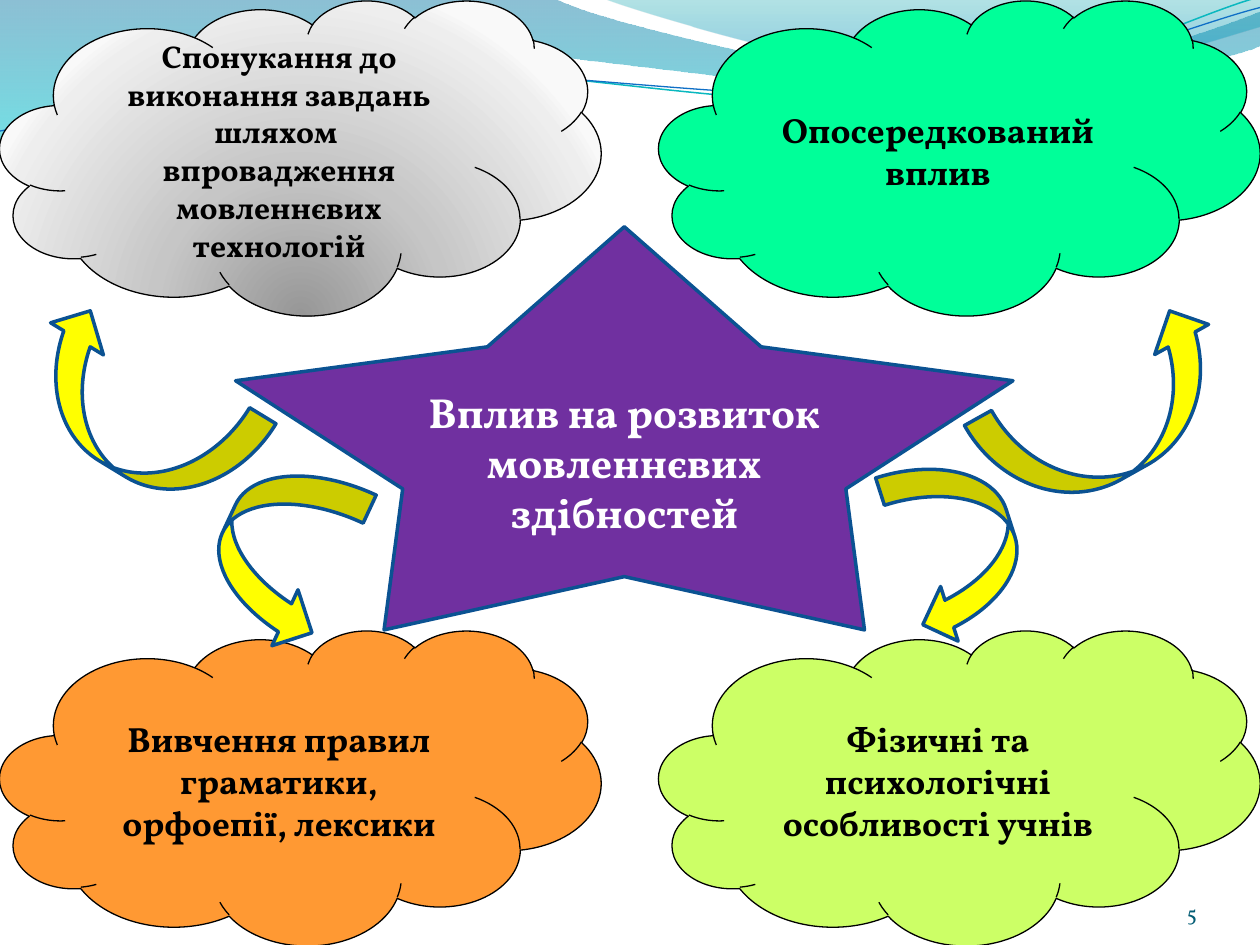
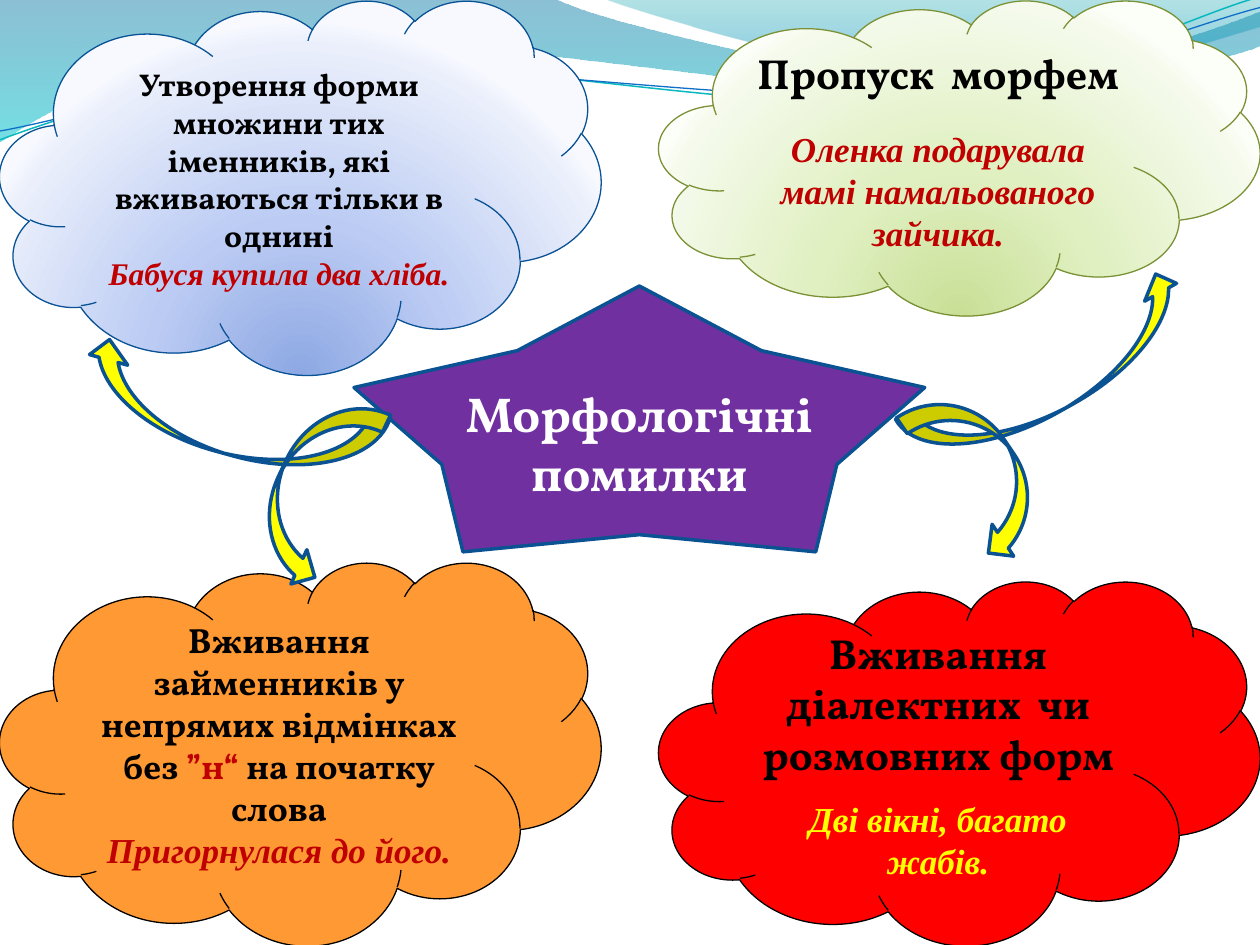
from pptx import Presentation
from pptx.dml.color import RGBColor
from pptx.enum.shapes import MSO_SHAPE
from pptx.enum.text import MSO_ANCHOR, PP_ALIGN
from pptx.oxml import parse_xml
from pptx.oxml.ns import nsdecls, qn
from pptx.util import Inches, Pt

CLOUD = MSO_SHAPE.CLOUD
STAR = MSO_SHAPE.STAR_5_POINT
ARROW = MSO_SHAPE.CURVED_UP_ARROW
MIDDLE, BOTTOM = MSO_ANCHOR.MIDDLE, MSO_ANCHOR.BOTTOM
CENTER, RIGHT = PP_ALIGN.CENTER, PP_ALIGN.RIGHT

BLACK = RGBColor(0x00, 0x00, 0x00)
WHITE = RGBColor(0xFF, 0xFF, 0xFF)
PURPLE = RGBColor(0x70, 0x30, 0xA0)
NAVY = RGBColor(0x0B, 0x52, 0x92)
BLUE = RGBColor(0x09, 0x52, 0x95)
OLIVE = RGBColor(0x7B, 0x91, 0x35)
YELLOW = RGBColor(0xFF, 0xFF, 0x00)
CRIMSON = RGBColor(0xC0, 0x00, 0x00)
RED = RGBColor(0xFF, 0x00, 0x00)
ORANGE = RGBColor(0xFF, 0x99, 0x33)
MINT = RGBColor(0x00, 0xFF, 0x99)
LIME = RGBColor(0xCC, 0xFF, 0x66)
PAGE = RGBColor(0x04, 0x5D, 0x75)
TEAL = RGBColor(0x0A, 0xB8, 0xBF)
AZURE = RGBColor(0x0F, 0x6F, 0xC6)

SERIF = "Vollkorn"
TIMES = "Times New Roman"

# Gradients: direction, then stops of position, colour and opacity
DOWN = '<a:lin ang="5400000" scaled="0"/>'
GLOW = ('<a:path path="circle"><a:fillToRect l="50000" t="130000" '
        'r="50000" b="-30000"/></a:path>')
GREY = (GLOW, [(0, "979797", 100), (43, "C6C6C6", 100),
               (93, "EEEEEE", 100), (100, "F9F9F9", 100)])
SKY = (GLOW, [(0, "8DA8E3", 100), (43, "BBCBF3", 100),
              (93, "EAEFFB", 100), (100, "F7F9FF", 100)])
LEAF = (GLOW, [(0, "C9DF97", 100), (43, "E0F0C1", 100),
               (93, "F5FAEC", 100), (100, "FCFEF8", 100)])
SEA = (DOWN, [(0, "0074A1", 45), (100, "00C6CF", 55)])
BAY = (DOWN, [(0, "00A1A9", 30), (80, "008BBF", 45)])


def paint(shape, fill, line, width=0.75):
    """Set fill (none, plain or gradient) and outline, without a shadow."""
    shape.shadow.inherit = False
    if fill is None:
        shape.fill.background()
    else:
        shape.fill.solid()
        if isinstance(fill, RGBColor):
            shape.fill.fore_color.rgb = fill
        else:
            way, stops = fill
            marks = "".join(
                f'<a:gs pos="{pos * 1000}"><a:srgbClr val="{tone}">'
                f'<a:alpha val="{alpha * 1000}"/></a:srgbClr></a:gs>'
                for pos, tone, alpha in stops)
            props = shape.element.spPr
            props.replace(props.find(qn("a:solidFill")), parse_xml(
                f'<a:gradFill {nsdecls("a")} rotWithShape="1">'
                f'<a:gsLst>{marks}</a:gsLst>{way}</a:gradFill>'))
    if line is None:
        shape.line.fill.background()
    else:
        shape.line.color.rgb = line
        shape.line.width = Pt(width)


def write(shape, paras, align=CENTER, anchor=MIDDLE):
    """Each paragraph: size, font, space before, then (text, colour) runs."""
    frame = shape.text_frame
    frame.word_wrap = True
    frame.vertical_anchor = anchor
    for i, (size, face, gap, *runs) in enumerate(paras):
        para = frame.add_paragraph() if i else frame.paragraphs[0]
        para.alignment = align
        para.space_before = Pt(gap)
        for text, tone in runs:
            run = para.add_run()
            run.text = text
            run.font.size = Pt(size)
            run.font.name = face
            run.font.bold = True
            run.font.italic = face == TIMES
            run.font.color.rgb = tone


# Waves: two numbers make a straight step, six make a Bezier curve
WAVES = [
    (SEA, None, 0, [
        (0, -0.01), (4.4, -0.01), (4.76, 0.17, 6.64, 0.63, 7.58, 0.63),
        (8.53, 0.63, 9.58, 0.26, 10, 0.09), (10.01, 0.36),
        (9.83, 0.44, 8.7, 0.76, 7.46, 0.75),
        (6.22, 0.75, 3.82, 0.28, 2.57, 0.34),
        (1.29, 0.35, 0.46, 0.83, -0.01, 1.13)]),
    (BAY, None, 0, [
        (4.79, -0.01), (5.09, 0.11, 6.82, 0.62, 7.69, 0.65),
        (8.56, 0.69, 9.61, 0.32, 10, 0.21), (10, 0)]),
    (None, TEAL, 0.85, [
        (0, 1.11), (0.48, 0.93, 1.58, 0.57, 2.77, 0.52),
        (3.95, 0.47, 5.93, 0.89, 7.13, 0.8),
        (8.33, 0.71, 9.38, 0.15, 9.98, -0.02)]),
    (None, AZURE, 0.75, [
        (0, 1.04), (0.47, 0.96, 1.64, 0.61, 2.83, 0.56),
        (4.03, 0.51, 5.97, 0.83, 7.17, 0.75),
        (8.36, 0.67, 9.41, 0.21, 10, 0.06)]),
]

# Slide content
WIDE = 4.77
LEFT, FAR = 0, 10 - WIDE
SLIDES = [
    {
        "page": "5",
        "star": ((1.87, 1.8, 6.17, 3.2), 0.285, 24,
                 "Вплив на розвиток мовленнєвих здібностей"),
        "clouds": [
            (LEFT, 0, 2.5, GREY, BLACK, [
                (18, SERIF, 0, ("Спонукання до виконання завдань шляхом  "
                                "впровадження мовленнєвих технологій", BLACK))]),
            (FAR, 0, 2.5, MINT, BLACK, [
                (20, SERIF, 0, ("Опосередкований вплив", BLACK))]),
            (FAR, 5, 2.5, LIME, BLACK, [
                (20, SERIF, 0,
                 ("Фізичні та психологічні особливості учнів", BLACK))]),
            (LEFT, 5, 2.5, ORANGE, BLACK, [
                (20, SERIF, 0,
                 ("Вивчення правил граматики, орфоепії, лексики", BLACK))]),
        ],
        "arrows": [
            ((7.76, 2.8, 2.11, 0.98), 330.8, None),
            ((0.11, 2.78, 1.97, 0.98), 31.3, "flipH"),
            ((1.51, 3.89, 1.45, 0.98), 115, None),
            ((6.88, 3.89, 1.45, 0.91), 72.2, "flipV"),
        ],
    },
    {
        "page": None,
        "star": ((2.81, 2.27, 4.53, 2.11), 0.346, 28, "Морфологічні помилки"),
        "clouds": [
            (LEFT, 0, 2.97, SKY, BLUE, [
                (18, SERIF, 0, ("Утворення форми множини тих іменників, "
                                "які вживаються тільки в однині", BLACK)),
                (18, TIMES, 0, ("Бабуся купила два хліба.", CRIMSON))]),
            (FAR, 0, 2.5, LEAF, OLIVE, [
                (24, SERIF, 0, ("Пропуск  морфем", BLACK)),
                (20, TIMES, 17,
                 ("Оленка подарувала мамі намальованого зайчика.", CRIMSON))]),
            (FAR, 4.61, 2.89, RED, BLACK, [
                (24, SERIF, 0, ("Вживання діалектних  чи розмовних форм", BLACK)),
                (20, TIMES, 11, ("Дві вікні, багато жабів.", YELLOW))]),
            (LEFT, 4.46, 3.04, ORANGE, BLACK, [
                (20, SERIF, 0,
                 ("Вживання займенників у непрямих відмінках без ", BLACK),
                 ("”н“", CRIMSON), (" на початку слова", BLACK)),
                (20, TIMES, 0, ("Пригорнулася до його.", CRIMSON))]),
        ],
        "arrows": [
            ((7.09, 2.68, 2.51, 0.58), 330.8, None),
            ((0.59, 2.97, 2.47, 0.63), 15.4, "flipH"),
            ((1.71, 3.58, 1.57, 0.6), 115, None),
            ((7.05, 3.44, 1.45, 0.61), 55.8, "flipV"),
        ],
    },
]

deck = Presentation()
deck.slide_width, deck.slide_height = Inches(10), Inches(7.5)
blank = deck.slide_layouts[6]
for holder in list(blank.placeholders):
    blank.shapes.element.remove(holder.element)
pages = [deck.slides.add_slide(blank) for _ in SLIDES]

# Shared waves: drawn once, then moved to the layout
for fill, line, width, steps in WAVES:
    ends = [(Inches(step[-2]), Inches(step[-1])) for step in steps]
    pen = pages[0].shapes.build_freeform(*ends[0])
    pen.add_line_segments(ends[1:], close=fill is not None)
    wave = pen.convert_to_shape()
    sides = list(wave.element.iter(qn("a:lnTo")))
    for side, step in zip(sides, steps[1:]):
        if len(step) == 6:
            marks = "".join(
                f'<a:pt x="{Inches(x) - wave.left}" y="{Inches(y) - wave.top}"/>'
                for x, y in zip(step[::2], step[1::2]))
            side.getparent().replace(side, parse_xml(
                f'<a:cubicBezTo {nsdecls("a")}>{marks}</a:cubicBezTo>'))
    paint(wave, fill, line, width)
    blank.shapes.element.append(wave.element)

for page, data in zip(pages, SLIDES):
    shapes = page.shapes

    # Page number
    if data["page"]:
        label = shapes.add_textbox(*map(Inches, (8.67, 6.95, 0.83, 0.4)))
        frame = label.text_frame
        frame.margin_left = frame.margin_right = 0
        frame.margin_top = frame.margin_bottom = 0
        write(label, [(12, SERIF, 0, (data["page"], PAGE))], RIGHT, BOTTOM)
        frame.paragraphs[0].runs[0].font.bold = False

    # Central star
    box, depth, size, title = data["star"]
    star = shapes.add_shape(STAR, *map(Inches, box))
    star.adjustments[0] = depth
    paint(star, PURPLE, NAVY, 2)
    write(star, [(size, SERIF, 0, (title, WHITE))])

    # Corner clouds
    for left, top, high, fill, line, paras in data["clouds"]:
        cloud = shapes.add_shape(CLOUD, *map(Inches, (left, top, WIDE, high)))
        paint(cloud, fill, line)
        write(cloud, paras)

    # Curved arrows from the star to the clouds
    for box, turn, flip in data["arrows"]:
        arrow = shapes.add_shape(ARROW, *map(Inches, box))
        arrow.rotation = turn
        if flip:
            arrow.element.spPr.find(qn("a:xfrm")).set(flip, "1")
        paint(arrow, YELLOW, NAVY, 2)

deck.save("out.pptx")
